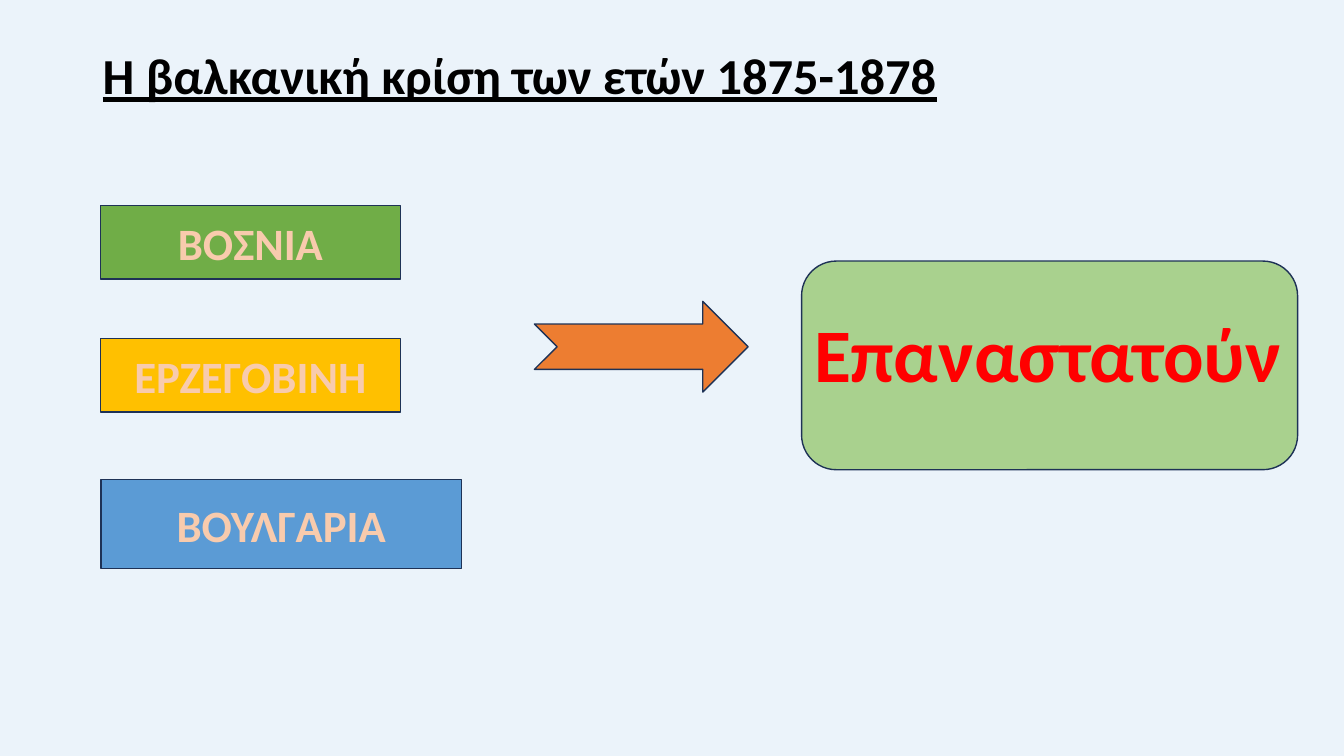
from lxml.etree import SubElement
from pptx import Presentation
from pptx.dml.color import RGBColor
from pptx.enum.shapes import MSO_SHAPE
from pptx.enum.text import MSO_ANCHOR, PP_ALIGN
from pptx.oxml.ns import qn
from pptx.util import Inches, Pt

BACKGROUND = RGBColor(0xEB, 0xF3, 0xFA)
BLACK = RGBColor(0x00, 0x00, 0x00)
WHITE = RGBColor(0xFF, 0xFF, 0xFF)
RED = RGBColor(0xFF, 0x00, 0x00)
NAVY = RGBColor(0x1E, 0x32, 0x56)
ORANGE = RGBColor(0xED, 0x7D, 0x31)
PEACH = RGBColor(0xF8, 0xCB, 0xAD)
GREEN = RGBColor(0x70, 0xAD, 0x47)
GOLD = RGBColor(0xFF, 0xC0, 0x00)
BLUE = RGBColor(0x5B, 0x9B, 0xD5)
LIGHT_GREEN = RGBColor(0xA9, 0xD1, 0x8E)


class SlideBuilder:
    font = "Calibri"

    def __init__(self, slide):
        self.s = slide
        fill = slide.background.fill
        fill.solid()
        fill.fore_color.rgb = BACKGROUND

    def shape(self, kind, left, top, width, height, color):
        sp = self.s.shapes.add_shape(
            kind, Inches(left), Inches(top), Inches(width), Inches(height))
        sp.shadow.inherit = False
        sp.fill.solid()
        sp.fill.fore_color.rgb = color
        sp.line.color.rgb = NAVY
        sp.line.width = Pt(1)
        return sp

    def textbox(self, left, top, width, height, wrap=True):
        sp = self.s.shapes.add_textbox(
            Inches(left), Inches(top), Inches(width), Inches(height))
        sp.text_frame.word_wrap = wrap
        return sp

    def bold_text(self, sp, text, size, color, align=PP_ALIGN.CENTER):
        """Add one bold run to the first paragraph and return the run."""
        p = sp.text_frame.paragraphs[0]
        p.alignment = align
        r = p.add_run()
        r.text = text
        r.font.name = self.font
        r.font.size = Pt(size)
        r.font.bold = True
        r.font.color.rgb = color
        return r

    def outline(self, r, color, width):
        """Draw a line around the letters of a run."""
        props = r._r.get_or_add_rPr()
        ln = SubElement(props, qn("a:ln"), w=str(Pt(width)))
        fill = SubElement(ln, qn("a:solidFill"))
        SubElement(fill, qn("a:srgbClr"), val=str(color))
        props.insert(0, ln)

    def title(self, text):
        sp = self.textbox(0.92, 0.46, 11.5, 0.7)
        r = self.bold_text(sp, text, 36, BLACK, PP_ALIGN.LEFT)
        r.font.underline = True
        sp.text_frame.paragraphs[0].line_spacing = 0.9

    def region(self, name, top, width, height, color):
        sp = self.shape(MSO_SHAPE.RECTANGLE, 1, top, width, height, color)
        sp.text_frame.vertical_anchor = MSO_ANCHOR.MIDDLE
        self.outline(self.bold_text(sp, name, 32, PEACH), ORANGE, 1.75)

    def outcome(self, text):
        self.shape(MSO_SHAPE.ROUNDED_RECTANGLE, 7.95, 2.59, 4.92, 2.07, LIGHT_GREEN)
        sp = self.textbox(7.95, 3, 4.88, 1.01, wrap=False)
        self.outline(self.bold_text(sp, text, 54, RED), WHITE, 0.75)


def main():
    prs = Presentation()
    prs.slide_width, prs.slide_height = Inches(13.33), Inches(7.5)
    slide = SlideBuilder(prs.slides.add_slide(prs.slide_layouts[6]))
    slide.title("Η βαλκανική κρίση των ετών 1875-1878")
    slide.shape(MSO_SHAPE.NOTCHED_RIGHT_ARROW, 5.3, 2.99, 2.12, 0.9, ORANGE)
    for region in (
        ("ΒΟΣΝΙΑ", 2.04, 2.97, 0.73, GREEN),
        ("ΕΡΖΕΓΟΒΙΝΗ", 3.36, 2.97, 0.73, GOLD),
        ("ΒΟΥΛΓΑΡΙΑ", 4.76, 3.58, 0.88, BLUE),
    ):
        slide.region(*region)
    slide.outcome("Επαναστατούν")
    prs.save("out.pptx")


if __name__ == "__main__":
    main()
